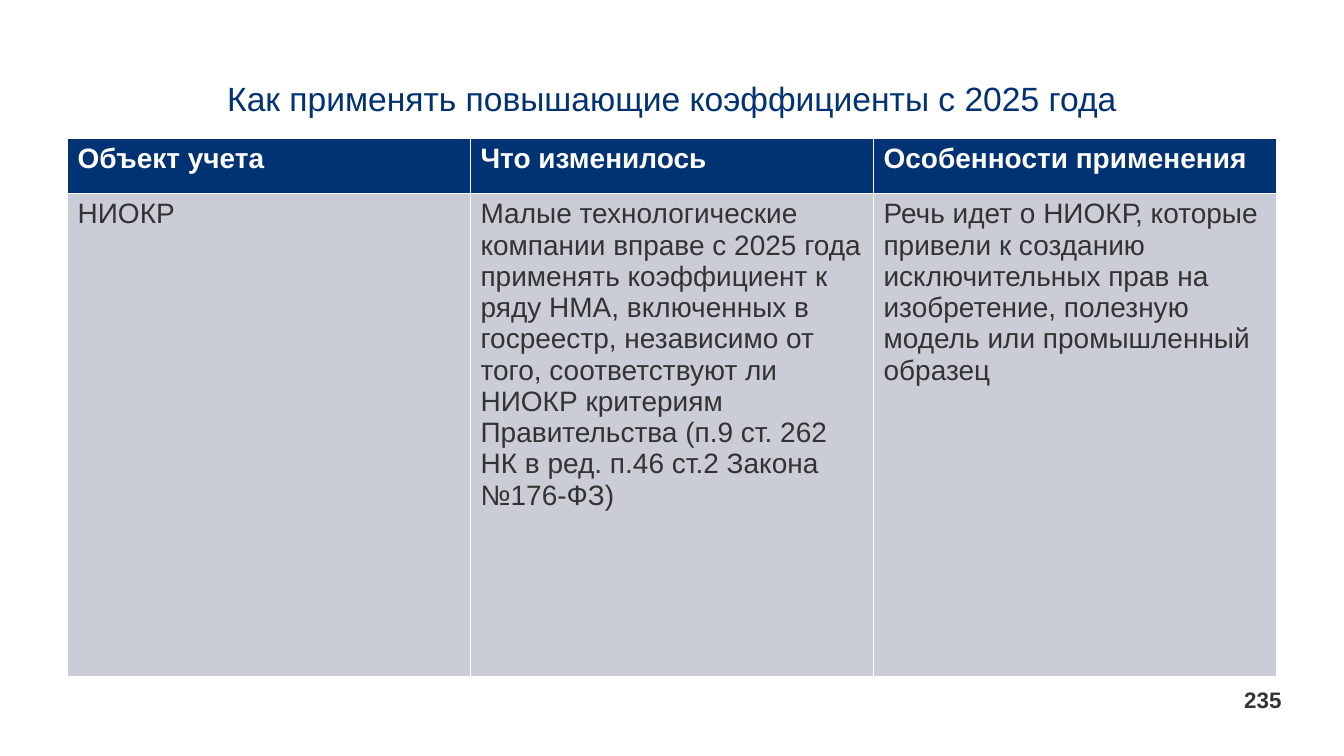
from lxml import etree
from pptx import Presentation
from pptx.dml.color import RGBColor
from pptx.enum.text import MSO_ANCHOR, MSO_AUTO_SIZE, PP_ALIGN
from pptx.oxml.ns import qn
from pptx.util import Pt

PX = 9144
TOP, BOTTOM = MSO_ANCHOR.TOP, MSO_ANCHOR.BOTTOM
CENTER, RIGHT = PP_ALIGN.CENTER, PP_ALIGN.RIGHT
NO_AUTOFIT = MSO_AUTO_SIZE.NONE

FONT = "Arial"
NAVY = RGBColor(0x00, 0x32, 0x74)
GRAY = RGBColor(0xCB, 0xCD, 0xD6)
DARK = RGBColor(0x33, 0x33, 0x33)
WHITE = RGBColor(0xFF, 0xFF, 0xFF)
THIN, THICK = 0.45, 1.47

TITLE = "Как применять повышающие коэффициенты с 2025 года"
ROWS = [
    ["Объект учета", "Что изменилось", "Особенности применения"],
    [
        "НИОКР",
        "Малые технологические компании вправе с 2025 года применять "
        "коэффициент к ряду НМА, включенных в госреестр, независимо от того, "
        "соответствуют ли НИОКР критериям Правительства (п.9 ст. 262 НК "
        "в ред. п.46 ст.2 Закона №176-ФЗ)",
        "Речь идет о НИОКР, которые привели к созданию исключительных прав "
        "на изобретение, полезную модель или промышленный образец",
    ],
]
ROW_HEIGHTS = [55, 479]


def px(*lengths):
    return [length * PX for length in lengths]


def set_font(paragraph, size, color, bold=False):
    font = paragraph.font
    font.name = FONT
    font.size = Pt(size)
    font.bold = bold
    font.color.rgb = color


def set_borders(cell, widths):
    properties = cell._tc.get_or_add_tcPr()
    for side, width in widths.items():
        line = etree.SubElement(properties, qn(f"a:ln{side}"), w=str(Pt(width)))
        fill = etree.SubElement(line, qn("a:solidFill"))
        etree.SubElement(fill, qn("a:srgbClr"), val=str(WHITE))


def add_title(slide, left, top, width, height):
    title = slide.shapes.title
    title.left, title.top, title.width, title.height = px(left, top, width, height)
    frame = title.text_frame
    frame.text = TITLE
    frame.word_wrap = True
    frame.auto_size = NO_AUTOFIT
    frame.vertical_anchor = TOP
    paragraph = frame.paragraphs[0]
    paragraph.alignment = CENTER
    paragraph.line_spacing = 0.9
    set_font(paragraph, 24, NAVY)


def add_changes_table(slide, left, top, width):
    column_count = len(ROWS[0])
    box = px(left, top, width, sum(ROW_HEIGHTS))
    table = slide.shapes.add_table(len(ROWS), column_count, *box).table
    for column in table.columns:
        column.width = width * PX // column_count
    for row_index, (texts, height) in enumerate(zip(ROWS, ROW_HEIGHTS)):
        header = row_index == 0
        table.rows[row_index].height = height * PX
        for column_index, text in enumerate(texts):
            cell = table.cell(row_index, column_index)
            cell.text = text
            set_font(cell.text_frame.paragraphs[0], 20, WHITE if header else DARK, header)
            set_borders(cell, {
                "L": THIN,
                "R": THIN,
                "T": THIN if header else THICK,
                "B": THICK if header else THIN,
            })
            cell.fill.solid()
            cell.fill.fore_color.rgb = NAVY if header else GRAY


def add_page_number(slide, left, top, width, height):
    frame = slide.shapes.add_textbox(*px(left, top, width, height)).text_frame
    frame.word_wrap = True
    frame.auto_size = NO_AUTOFIT
    frame.vertical_anchor = BOTTOM
    frame.margin_left = frame.margin_right = 0
    frame.margin_top = frame.margin_bottom = 0
    paragraph = frame.paragraphs[0]
    paragraph.text = "235"
    paragraph.alignment = RIGHT
    paragraph.line_spacing = 0.9
    paragraph.space_before = Pt(10)
    set_font(paragraph, 16, DARK, True)


def main():
    presentation = Presentation()
    presentation.slide_width, presentation.slide_height = px(1334, 750)
    slide = presentation.slides.add_slide(presentation.slide_layouts[5])
    add_page_number(slide, 1222, 685, 50, 23)
    add_title(slide, 67, 77, 1200, 125)
    add_changes_table(slide, 67, 137, 1200)
    presentation.save("out.pptx")


if __name__ == "__main__":
    main()
